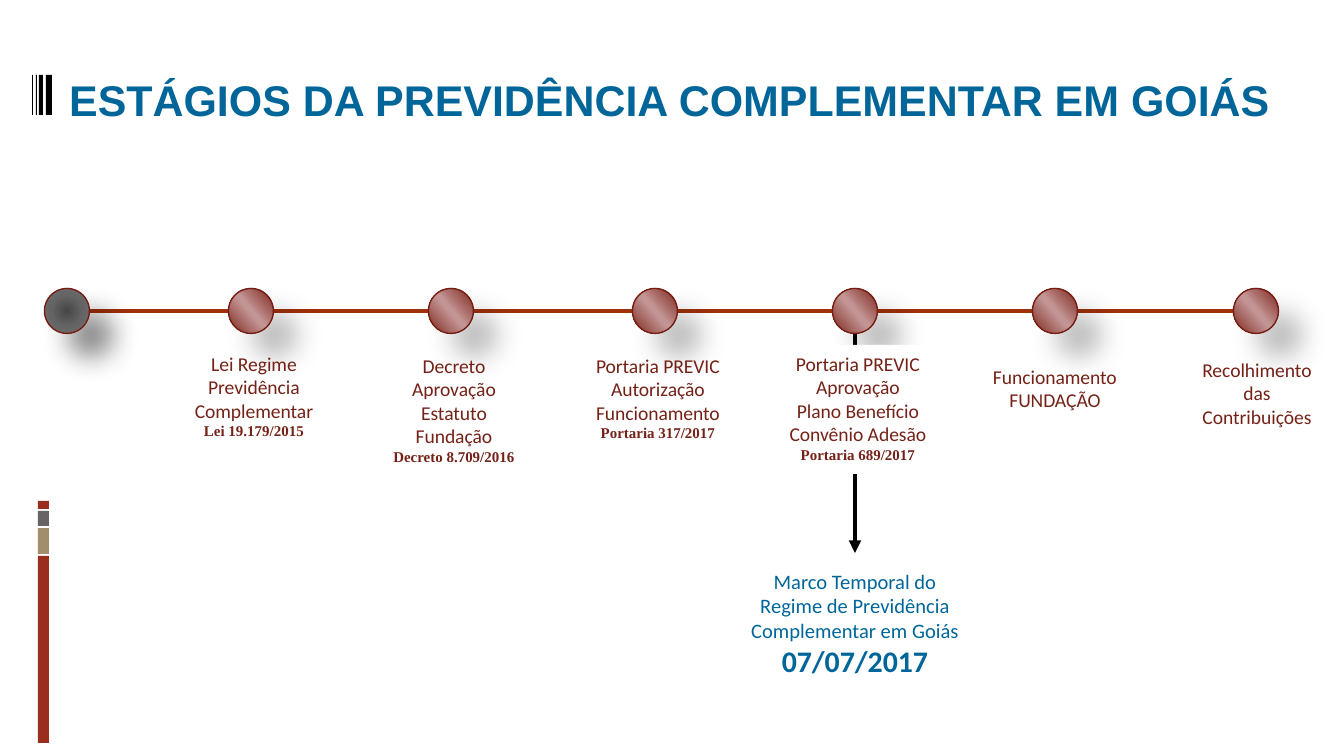
from pptx import Presentation, oxml, util as u
from pptx.dml.color import RGBColor
from pptx.enum import shapes, text
from pptx.oxml import ns

PX = 914400 / 134.4
BLUE = RGBColor(0x00, 0x66, 0x99)
BLACK = RGBColor(0x00, 0x00, 0x00)
WHITE = RGBColor(0xFF, 0xFF, 0xFF)
RED = RGBColor(0x9B, 0x2D, 0x1F)
SAND = RGBColor(0xA2, 0x8E, 0x6A)
GRAY = RGBColor(0x69, 0x64, 0x64)
RUST = RGBColor(0xA0, 0x31, 0x0A)
OUTLINE = RGBColor(0x75, 0x1D, 0x12)
LABEL = RGBColor(0x74, 0x22, 0x17)

TITLE = "ESTÁGIOS DA PREVIDÊNCIA COMPLEMENTAR EM GOIÁS"
SIDE_BARS = [(501, 8, RED), (511, 15, GRAY), (528, 26, SAND), (556, 187, RED)]  # top, height
TITLE_BARS = [(32, 1), (36, 1), (39, 4), (46, 6)]  # left, width

# dot centre, label centre, label top, width, height, label lines, legal act
STAGES = [
    (251, 254, 345, 150, 105, ["Lei Regime", "Previdência", "Complementar"], "Lei 19.179/2015"),
    (451, 454, 347, 173, 103, ["Decreto", "Aprovação", "Estatuto Fundação"], "Decreto 8.709/2016"),
    (655, 658, 347, 160, 105, ["Portaria PREVIC", "Autorização", "Funcionamento"],
     "Portaria 317/2017"),
    (855, 858, 345, 169, 129, ["Portaria PREVIC", "Aprovação", "Plano Benefício",
                               "Convênio Adesão"], "Portaria 689/2017"),
    (1055, 1055, 358, 156, 60, ["Funcionamento", "FUNDAÇÃO"], None),
    (1256, 1257, 351, 146, 85, ["Recolhimento", "das Contribuições"], None),
]
START_X, AXIS_Y, DOT = 67, 311, 45
MILESTONE_X = 855
MILESTONE = ["Marco Temporal do", "Regime de Previdência", "Complementar em Goiás"]
MILESTONE_DATE = "07/07/2017"

RED_STOPS = [(0, "7C2419"), (33, "AD706D"), (47, "C29594"),
             (53, "C29594"), (68, "AE726F"), (100, "7C2419")]
RED_DIRECTION = '<a:lin ang="8340000" scaled="1"/>'
DARK_STOPS = [(0, "474747"), (50, "646464"), (100, "777777")]
DARK_DIRECTION = ('<a:path path="circle"><a:fillToRect l="50000" t="50000" '
                  'r="50000" b="50000"/></a:path>')


def px(value):
    return u.Emu(round(value * PX))


def box(*lengths):
    return [px(length) for length in lengths]


def xml(markup):
    """Parse an element whose first tag needs the drawing namespace."""
    tag, rest = markup.split(">", 1)
    return oxml.parse_xml(f"{tag} {ns.nsdecls('a')}>{rest}")


def add_bar(left, top, width, height, color):
    bar = slide.shapes.add_shape(shapes.MSO_SHAPE.RECTANGLE, *box(left, top, width, height))
    bar.shadow.inherit = False
    bar.fill.solid()
    bar.fill.fore_color.rgb = color
    bar.line.fill.background()


def add_line(x1, y1, x2, y2, color):
    line = slide.shapes.add_connector(shapes.MSO_CONNECTOR.STRAIGHT, *box(x1, y1, x2, y2))
    line.line.color.rgb = color
    line.line.width = u.Pt(2.25)
    line._element.spPr.append(xml("<a:effectLst></a:effectLst>"))
    return line


def add_dot(center, stops, direction, shadow_percent):
    dot = slide.shapes.add_shape(shapes.MSO_SHAPE.OVAL,
                                 *box(center - DOT / 2, AXIS_Y - DOT / 2, DOT, DOT))
    properties = dot._element.spPr
    marks = "".join(f'<a:gs pos="{position * 1000}"><a:srgbClr val="{color}"/></a:gs>'
                    for position, color in stops)
    properties.insert(2, xml(f"<a:gradFill><a:gsLst>{marks}</a:gsLst>{direction}</a:gradFill>"))
    dot.line.color.rgb = OUTLINE
    dot.line.width = u.Pt(0.75)
    dot.shadow.inherit = False
    properties.find(ns.qn("a:effectLst")).append(xml(
        f'<a:outerShdw blurRad="{u.Pt(15)}" dist="{u.Pt(18)}" dir="2700000" algn="ctr" '
        f'rotWithShape="0"><a:srgbClr val="000000"><a:alpha val="{shadow_percent * 1000}"/>'
        '</a:srgbClr></a:outerShdw>'))


def add_text(left, top, width, height, lines, wrap=False, align=text.PP_ALIGN.CENTER):
    """Add a text box; each line is (wording, size, font, colour, bold)."""
    textbox = slide.shapes.add_textbox(*box(left, top, width, height))
    frame = textbox.text_frame
    frame.word_wrap = wrap
    frame.vertical_anchor = text.MSO_ANCHOR.TOP
    for index, (wording, size, name, color, bold) in enumerate(lines):
        paragraph = frame.paragraphs[0] if index == 0 else frame.add_paragraph()
        paragraph.text = wording
        paragraph.alignment = align
        font = paragraph.font
        font.size, font.name, font.bold = u.Pt(size), name, bold
        font.color.rgb = color
    return textbox


presentation = Presentation()
presentation.slide_width, presentation.slide_height = box(1344, 756)
slide = presentation.slides.add_slide(presentation.slide_layouts[6])

for top, height, color in SIDE_BARS:
    add_bar(38, top, 11, height, color)
for left, width in TITLE_BARS:
    add_bar(left, 75, width, 40, BLACK)

title = add_text(56, 66, 1277, 67, [(TITLE, 23, "Arial", BLUE, True)],
                 wrap=True, align=text.PP_ALIGN.JUSTIFY)
title.text_frame.vertical_anchor = text.MSO_ANCHOR.MIDDLE

arrow = add_line(MILESTONE_X, AXIS_Y, MILESTONE_X, 553, BLACK)
arrow.line._get_or_add_ln().append(xml('<a:tailEnd type="triangle"></a:tailEnd>'))
add_line(START_X, AXIS_Y, STAGES[-1][0], AXIS_Y, RUST)

add_dot(START_X, DARK_STOPS, DARK_DIRECTION, 45)
for stage in STAGES:
    add_dot(stage[0], RED_STOPS, RED_DIRECTION, 26)

for dot_x, center, top, width, height, lines, act in STAGES:
    content = [(line, 10.5, "Calibri", LABEL, False) for line in lines]
    if act:
        content.append((act, 8, "Times New Roman", LABEL, True))
    label = add_text(center - width / 2, top, width, height, content,
                     wrap=dot_x == STAGES[-1][0])
    if dot_x == MILESTONE_X:
        label.fill.solid()
        label.fill.fore_color.rgb = WHITE

add_text(MILESTONE_X - 120, 562, 240, 125,
         [(line, 11, "Calibri", BLUE, False) for line in MILESTONE]
         + [(MILESTONE_DATE, 16, "Calibri", BLUE, True)])

presentation.save("out.pptx")
